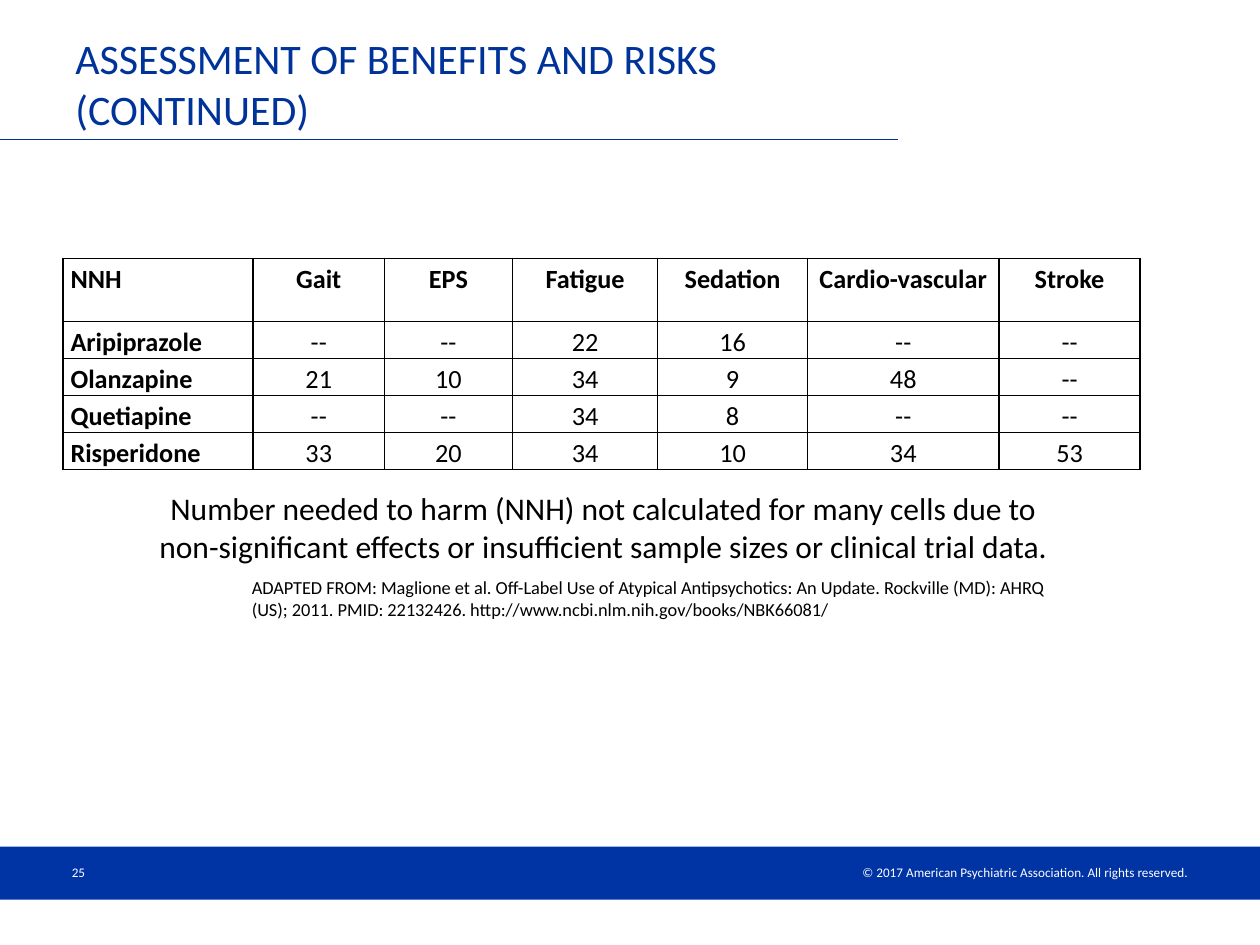
"""Build the slide on assessing benefits and risks, with its table of numbers needed to harm."""
from lxml.etree import SubElement
from pptx import Presentation
from pptx.dml.color import RGBColor
from pptx.enum.shapes import MSO_CONNECTOR, MSO_SHAPE
from pptx.enum.text import MSO_ANCHOR, PP_ALIGN
from pptx.oxml.ns import qn
from pptx.util import Inches, Pt

FONT = "Calibri"
BLACK, WHITE, NAVY, BLUE = "000000", "FFFFFF", "003399", "0033A3"
LEFT, MID, RIGHT = PP_ALIGN.LEFT, PP_ALIGN.CENTER, PP_ALIGN.RIGHT
TOP, HALF = MSO_ANCHOR.TOP, MSO_ANCHOR.MIDDLE
WIDE, SLIM = (0.1, 0.05), (0.07, 0.04)

TEXTS = [
    ("© 2017 American Psychiatric Association. All rights reserved. ",
     (5.18, 6.81, 4.37, 0.23), 7.5, WHITE, RIGHT, HALF, WIDE),
    ("25", (0.5, 6.72, 2.33, 0.4), 7.5, WHITE, LEFT, HALF, SLIM),
    ("ASSESSMENT OF BENEFITS AND RISKS (CONTINUED)",
     (0.5, 0.34, 6.63, 0.64), 24, NAVY, LEFT, HALF, WIDE),
    ("Number needed to harm (NNH) not calculated for many cells due to "
     "non-significant effects or insufficient sample sizes or clinical trial data.",
     (1.09, 3.83, 7.4, 0.71), 18, BLACK, MID, TOP, WIDE),
    ("ADAPTED FROM: Maglione et al. Off-Label Use of Atypical Antipsychotics: "
     "An Update. Rockville (MD): AHRQ (US); 2011. PMID: 22132426. "
     "http://www.ncbi.nlm.nih.gov/books/NBK66081/",
     (1.9, 4.52, 6.66, 0.45), 10.5, BLACK, LEFT, TOP, WIDE),
]
HARMS = [
    ["NNH", "Gait", "EPS", "Fatigue", "Sedation", "Cardio-vascular", "Stroke"],
    ["Aripiprazole", "--", "--", "22", "16", "--", "--"],
    ["Olanzapine", "21", "10", "34", "9", "48", "--"],
    ["Quetiapine", "--", "--", "34", "8", "--", "--"],
    ["Risperidone", "33", "20", "34", "10", "34", "53"],
]
WIDTHS = [1.51, 1.04, 1.02, 1.15, 1.19, 1.52, 1.12]
HEIGHTS = [0.5] + [0.29] * 4


def color(code):
    return RGBColor.from_string(code)


def inches(nums):
    return [Inches(num) for num in nums]


def write(para, text, size, code, align, bold=False):
    para.alignment = align
    run = para.add_run()
    run.text = text
    font = run.font
    font.name, font.size, font.bold = FONT, Pt(size), bold
    font.color.rgb = color(code)


def pad(item, side, edge):
    item.margin_left = item.margin_right = Inches(side)
    item.margin_top = item.margin_bottom = Inches(edge)


def add_text(slide, text, box, size, code, align, anchor, inset):
    frame = slide.shapes.add_textbox(*inches(box)).text_frame
    frame.word_wrap = True
    frame.vertical_anchor = anchor
    pad(frame, *inset)
    write(frame.paragraphs[0], text, size, code, align)


def add_frame(slide):
    bar = slide.shapes.add_shape(MSO_SHAPE.RECTANGLE, *inches((0, 6.72, 10, 0.42)))
    bar.shadow.inherit = False
    bar.fill.solid()
    bar.fill.fore_color.rgb = color(BLUE)
    bar.line.fill.background()
    rule = slide.shapes.add_connector(MSO_CONNECTOR.STRAIGHT, *inches((0, 1.11, 7.13, 1.11)))
    rule.line.width = Pt(0.75)
    rule.line.color.rgb = color(NAVY)
    SubElement(rule._element.spPr, qn("a:effectLst"))


def add_edges(cell):
    props = cell._tc.get_or_add_tcPr()
    for side in "LRTB":
        line = SubElement(props, qn(f"a:ln{side}"), w=str(Pt(1)))
        fill = SubElement(line, qn("a:solidFill"))
        SubElement(fill, qn("a:srgbClr"), val=BLACK)


def add_harms(slide):
    size = inches((0.5, 2.05, sum(WIDTHS), sum(HEIGHTS)))
    table = slide.shapes.add_table(len(HARMS), len(WIDTHS), *size).table
    table.first_row = table.horz_banding = False
    for col, width in zip(table.columns, WIDTHS):
        col.width = Inches(width)
    for row, height in zip(table.rows, HEIGHTS):
        row.height = Inches(height)
    for y, row in enumerate(HARMS):
        for x, text in enumerate(row):
            cell = table.cell(y, x)
            add_edges(cell)
            cell.fill.background()
            pad(cell, 0.06, 0)
            para = cell.text_frame.paragraphs[0]
            para.line_spacing = 1.15
            write(para, text, 15, BLACK, MID if x else LEFT, x == 0 or y == 0)


def main():
    deck = Presentation()
    deck.slide_width, deck.slide_height = inches((10, 7.5))
    slide = deck.slides.add_slide(deck.slide_layouts[6])
    add_frame(slide)
    add_harms(slide)
    for item in TEXTS:
        add_text(slide, *item)
    deck.save("out.pptx")


if __name__ == "__main__":
    main()
